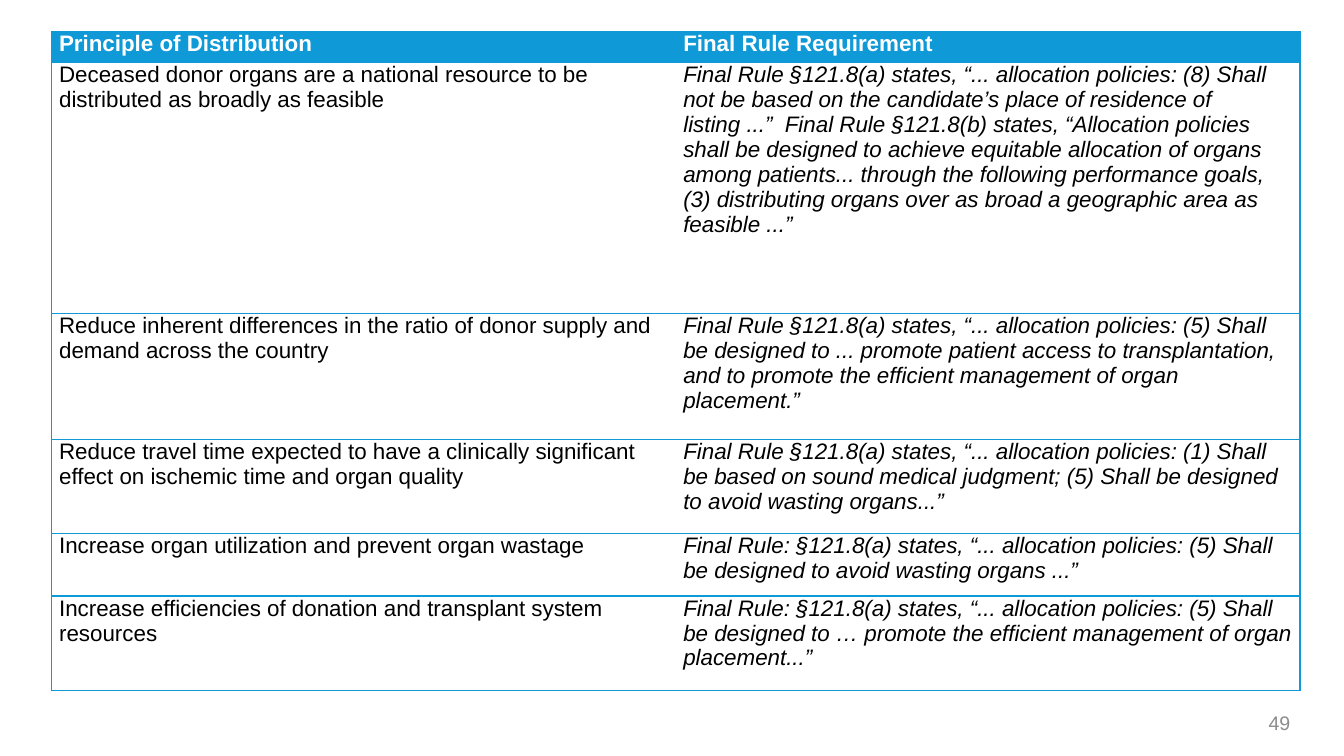
import pptx
import pptx.dml.color
import pptx.enum.text
import pptx.oxml
import pptx.oxml.ns
import pptx.util
from pptx.util import Cm, Pt

BLUE = pptx.dml.color.RGBColor(0x0F, 0x99, 0xD6)
WHITE = pptx.dml.color.RGBColor(0xFF, 0xFF, 0xFF)
BLACK = pptx.dml.color.RGBColor(0x00, 0x00, 0x00)
GREY = pptx.dml.color.RGBColor(0x8C, 0x8C, 0x8C)
FONT = "Arial"

COLUMN_WIDTH = 15.73
ROW_HEIGHTS = [0.79, 6.32, 3.17, 2.37, 1.58, 2.37]
ROWS = [
    ("Principle of Distribution", "Final Rule Requirement"),
    ("Deceased donor organs are a national resource to be distributed as broadly as feasible",
     "Final Rule §121.8(a) states, “... allocation policies: (8) Shall not be based on the "
     "candidate’s place of residence of listing ...”  Final Rule §121.8(b) states, “Allocation "
     "policies shall be designed to achieve equitable allocation of organs among patients... "
     "through the following performance goals, (3) distributing organs over as broad a "
     "geographic area as feasible ...”"),
    ("Reduce inherent differences in the ratio of donor supply and demand across the country",
     "Final Rule §121.8(a) states, “... allocation policies: (5) Shall be designed to ... promote "
     "patient access to transplantation, and to promote the efficient management of organ "
     "placement.”"),
    ("Reduce travel time expected to have a clinically significant effect on ischemic time and "
     "organ quality",
     "Final Rule §121.8(a) states, “... allocation policies: (1) Shall be based on sound medical "
     "judgment; (5) Shall be designed to avoid wasting organs...”"),
    ("Increase organ utilization and prevent organ wastage",
     "Final Rule: §121.8(a) states, “... allocation policies: (5) Shall be designed to avoid "
     "wasting organs ...”"),
    ("Increase efficiencies of donation and transplant system resources",
     "Final Rule: §121.8(a) states, “... allocation policies: (5) Shall be designed to … promote "
     "the efficient management of organ placement...”"),
]


def add_span(para, text, size, color, bold=False, italic=False):
    span = para.add_run()
    span.text = text
    span.font.name = FONT
    span.font.size = Pt(size)
    span.font.color.rgb = color
    span.font.bold = bold
    span.font.italic = italic


def set_borders(cell, blue_sides):
    """Draw the given sides (of L, R, T, B) in blue and hide the others."""
    properties = cell._tc.get_or_add_tcPr()
    for side in "LRTB":
        paint = "<a:noFill/>"
        if side in blue_sides:
            paint = f'<a:solidFill><a:srgbClr val="{BLUE}"/></a:solidFill>'
        properties.append(pptx.oxml.parse_xml(
            f'<a:ln{side} {pptx.oxml.ns.nsdecls("a")} w="{Pt(1)}">{paint}</a:ln{side}>'))


def fill_cell(cell, text, is_header, is_requirement):
    set_borders(cell, "TBR" if is_requirement else "TBL")
    cell.fill.solid()
    cell.fill.fore_color.rgb = BLUE if is_header else WHITE
    cell.margin_left = cell.margin_right = Cm(0.19)
    cell.margin_top = cell.margin_bottom = 0
    para = cell.text_frame.paragraphs[0]
    para.space_after = Pt(6)
    add_span(para, text, 16, WHITE if is_header else BLACK,
             bold=is_header, italic=is_requirement and not is_header)


def add_principles_table(page):
    frame = page.shapes.add_table(len(ROWS), 2, Cm(1.3), Cm(0.79),
                                  Cm(2 * COLUMN_WIDTH), Cm(sum(ROW_HEIGHTS)))
    table = frame.table
    table.horz_banding = False
    for column in table.columns:
        column.width = Cm(COLUMN_WIDTH)
    for row_index, (height, texts) in enumerate(zip(ROW_HEIGHTS, ROWS)):
        table.rows[row_index].height = Cm(height)
        for column_index, text in enumerate(texts):
            fill_cell(table.cell(row_index, column_index), text,
                      row_index == 0, column_index == 1)


def add_page_number(page, number):
    box = page.shapes.add_textbox(Cm(27.03), Cm(17.7), Cm(5.74), Cm(1.02))
    box.text_frame.word_wrap = True
    box.text_frame.vertical_anchor = pptx.enum.text.MSO_ANCHOR.MIDDLE
    para = box.text_frame.paragraphs[0]
    para.alignment = pptx.enum.text.PP_ALIGN.RIGHT
    add_span(para, number, 14, GREY)


def main():
    deck = pptx.Presentation()
    deck.slide_width = Cm(33.87)
    deck.slide_height = Cm(19.05)
    page = deck.slides.add_slide(deck.slide_layouts[6])
    add_principles_table(page)
    add_page_number(page, "49")
    deck.save("out.pptx")


if __name__ == "__main__":
    main()
